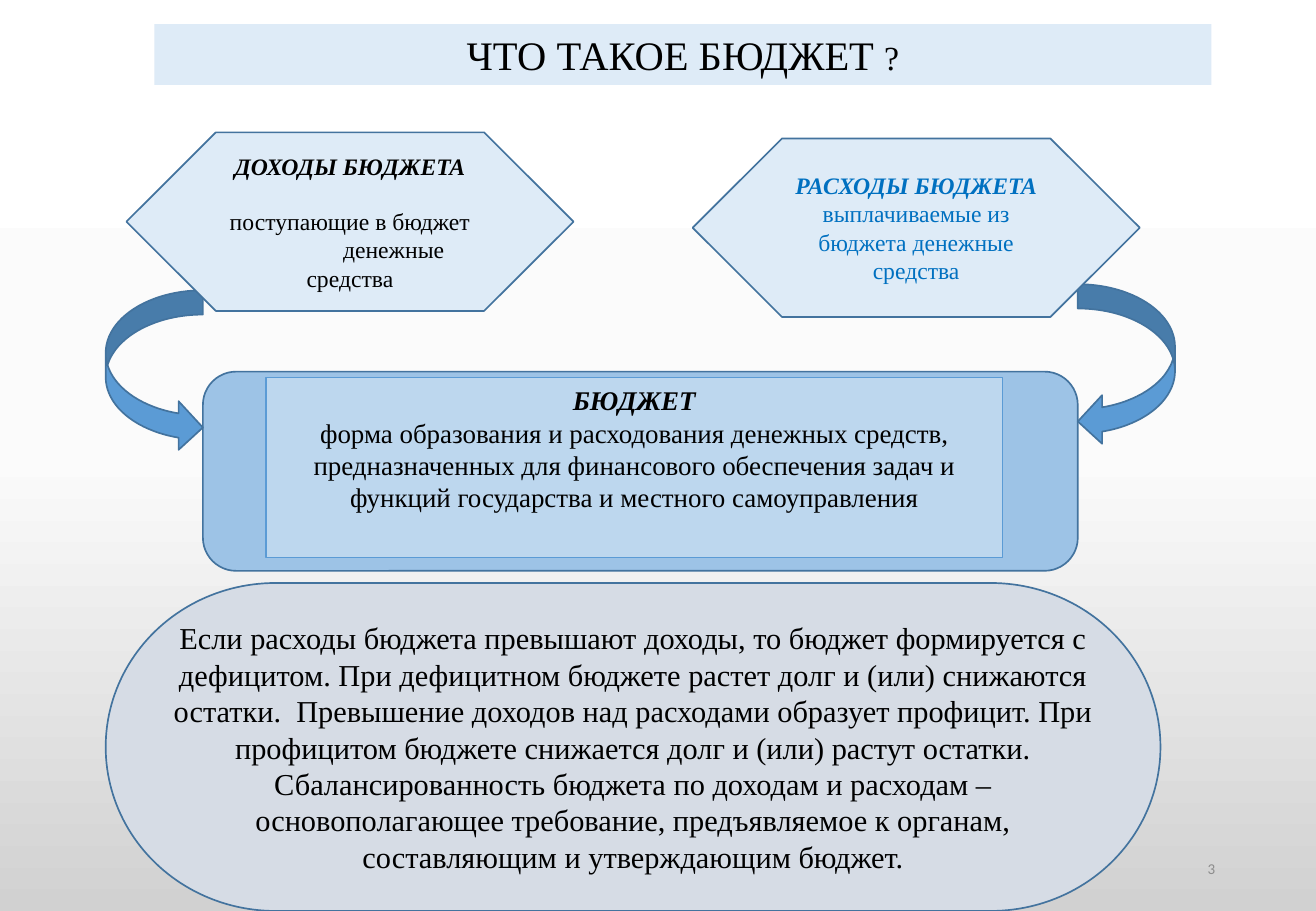
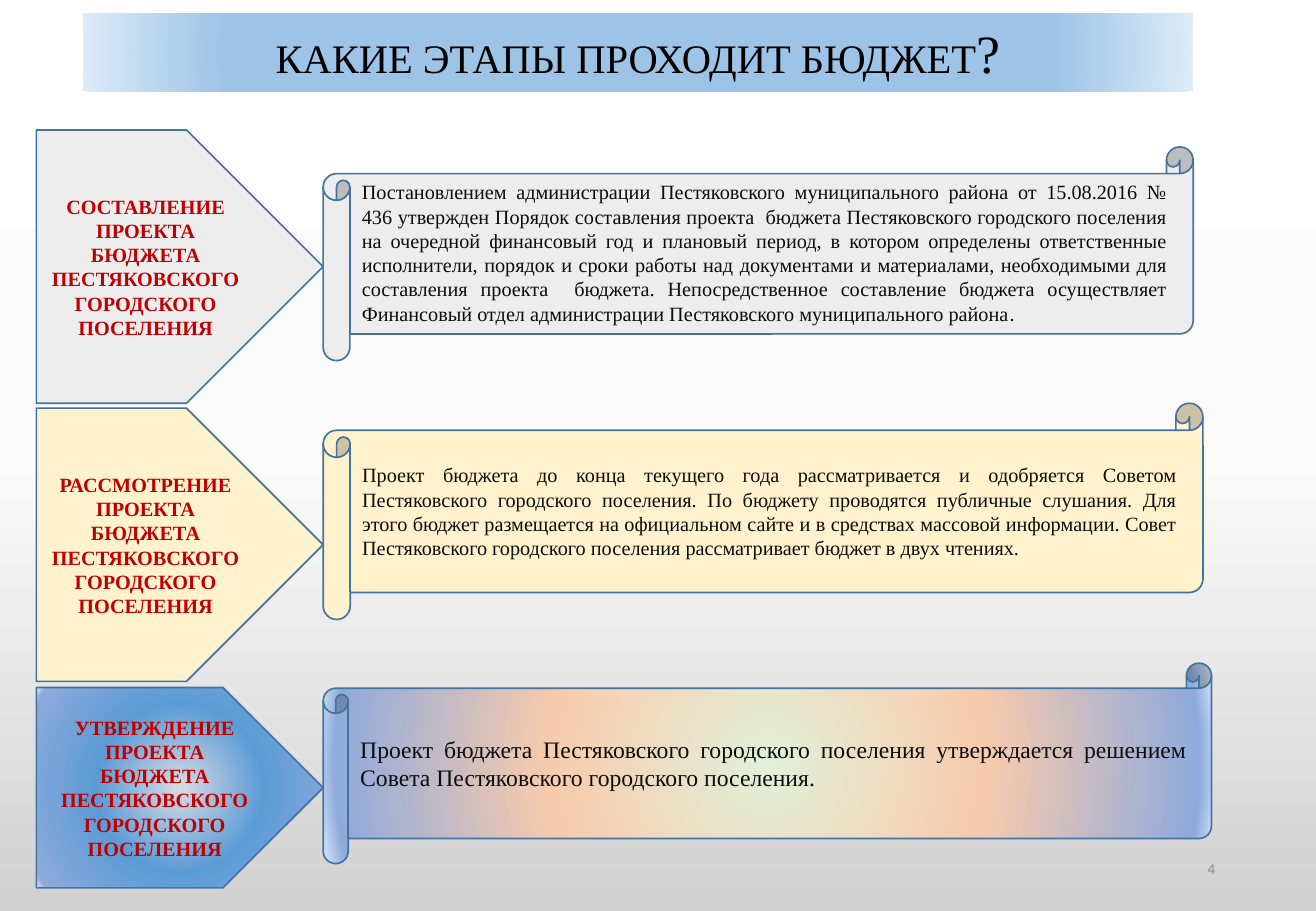
from lxml import etree
from pptx import Presentation
from pptx import util as u
from pptx.dml.color import RGBColor
from pptx.enum import shapes, text
from pptx.oxml import ns

PX = 9144  # EMU in one px, 100 px to the inch
WIDTH, HEIGHT = 1083, 750

BLACK = RGBColor(0x00, 0x00, 0x00)
INK = RGBColor(0x0D, 0x0D, 0x0D)
GREY = RGBColor(0x8C, 0x8C, 0x8C)
RED = RGBColor(0xC0, 0x00, 0x00)
BRIGHT_BLUE = RGBColor(0x00, 0x70, 0xC0)
OUTLINE = RGBColor(0x43, 0x73, 0x9E)
BLUE = RGBColor(0x5B, 0x9B, 0xD5)
SKY = RGBColor(0x9D, 0xC3, 0xE6)
LIGHT_SKY = RGBColor(0xBD, 0xD7, 0xEE)
PALE_BLUE = RGBColor(0xDE, 0xEB, 0xF7)
EDGE_BLUE = RGBColor(0xDC, 0xEB, 0xF8)
PERIWINKLE = RGBColor(0x8F, 0xAA, 0xDC)
SLATE = RGBColor(0xD6, 0xDC, 0xE5)
SILVER = RGBColor(0xED, 0xED, 0xED)
CREAM = RGBColor(0xFF, 0xF2, 0xCC)
MINT = RGBColor(0xE2, 0xF0, 0xD9)
PEACH = RGBColor(0xF8, 0xCB, 0xAD)

# Gradients as (position in percent, colour) stops
PAGE = [(0, RGBColor(0xFF, 0xFF, 0xFF)), (50, RGBColor(0xFB, 0xFB, 0xFB)),
        (100, RGBColor(0xD1, 0xD1, 0xD1))]
TITLE_GLOW = [(74, SKY), (100, EDGE_BLUE)]
BLUE_GLOW = [(0, SLATE), (48, BLUE), (95, PERIWINKLE), (100, EDGE_BLUE)]
PEACH_GLOW = [(0, MINT), (48, PEACH), (95, PERIWINKLE), (100, EDGE_BLUE)]

CENTER, RIGHT = text.PP_ALIGN.CENTER, text.PP_ALIGN.RIGHT
JUSTIFY = text.PP_ALIGN.JUSTIFY
TOP, MIDDLE = text.MSO_ANCHOR.TOP, text.MSO_ANCHOR.MIDDLE
KIND = shapes.MSO_SHAPE


def add_run(p, words, size=12, color=BLACK, bold=False, italic=False,
            font="Times New Roman"):
    r = p.add_run()
    r.text = words
    r.font.name, r.font.size = font, u.Pt(size)
    r.font.bold, r.font.italic = bold, italic
    r.font.color.rgb = color


def set_gradient(fill, parent, stops, angle=None):
    """Fill with a linear gradient, or from the centre outwards if no angle."""
    fill.solid()
    solid = parent.find(ns.qn("a:solidFill"))
    grad = etree.Element(ns.qn("a:gradFill"), rotWithShape="1")
    stop_list = etree.SubElement(grad, ns.qn("a:gsLst"))
    for position, color in stops:
        stop = etree.SubElement(stop_list, ns.qn("a:gs"), pos=str(position * 1000))
        etree.SubElement(stop, ns.qn("a:srgbClr"), val=str(color))
    if angle is None:
        centre = etree.SubElement(grad, ns.qn("a:path"), path="circle")
        etree.SubElement(centre, ns.qn("a:fillToRect"),
                         dict.fromkeys("ltrb", "50000"))
    else:
        etree.SubElement(grad, ns.qn("a:lin"), ang=str(angle * 60000), scaled="0")
    parent.replace(solid, grad)


class Deck:
    def __init__(self):
        self.prs = Presentation()
        self.prs.slide_width, self.prs.slide_height = WIDTH * PX, HEIGHT * PX
        self.s = None

    def slide(self, number):
        self.s = self.prs.slides.add_slide(self.prs.slide_layouts[6])
        fill = self.s.background.fill
        fill.solid()
        bg = next(self.s.element.iter(ns.qn("p:bgPr")))
        set_gradient(fill, bg, PAGE, angle=90)
        box = self.s.shapes.add_textbox(*(n * PX for n in (766, 695, 244, 40)))
        self.put_text(box, [[(str(number), {})]], align=RIGHT,
                      size=8.9, color=GREY, font="Calibri")

    def shape(self, kind, at, fill, line=OUTLINE, weight=1):
        sp = self.s.shapes.add_shape(kind, *(n * PX for n in at))
        sp.shadow.inherit = False
        if isinstance(fill, list):
            set_gradient(sp.fill, sp.element.spPr, fill)
        else:
            sp.fill.solid()
            sp.fill.fore_color.rgb = fill
        if line is None:
            sp.line.fill.background()
        else:
            sp.line.color.rgb, sp.line.width = line, u.Pt(weight)
        return sp

    def put_text(self, sp, paragraphs, align=CENTER, anchor=MIDDLE, **style):
        """Each paragraph is a list of (words, changes to the style)."""
        tf = sp.text_frame
        tf.word_wrap, tf.vertical_anchor = True, anchor
        for i, runs in enumerate(paragraphs):
            p = tf.add_paragraph() if i else tf.paragraphs[0]
            p.alignment = align
            for words, changes in runs:
                add_run(p, words, **{**style, **changes})
        return tf

    def title(self, at, fill, words, mark_size):
        sp = self.shape(KIND.RECTANGLE, at, fill, line=None)
        self.put_text(sp, [[(words, {}), ("?", {"size": mark_size})]],
                      anchor=TOP, size=24)


def budget_slide(deck):
    deck.slide(3)
    deck.title((127, 20, 870, 50), PALE_BLUE, "ЧТО ТАКОЕ БЮДЖЕТ ", 20)
    heading = {"bold": True, "italic": True}

    # Definition of the budget
    deck.shape(KIND.ROUNDED_RECTANGLE, (167, 306, 720, 164), SKY)
    sp = deck.shape(KIND.RECTANGLE, (219, 311, 606, 148), LIGHT_SKY, BLUE, 0.75)
    deck.put_text(sp, [
        [("БЮДЖЕТ", heading)],
        [("форма образования и расходования денежных средств, предназначенных "
          "для финансового обеспечения задач и функций государства и местного "
          "самоуправления", {})]], anchor=TOP, size=16)

    # Arrows from income and expenses to the budget
    deck.shape(KIND.CURVED_RIGHT_ARROW, (87, 239, 80, 133), BLUE)
    deck.shape(KIND.CURVED_LEFT_ARROW, (887, 234, 80, 133), BLUE)

    # Expenses and income
    sp = deck.shape(KIND.FLOWCHART_PREPARATION, (570, 114, 368, 147), PALE_BLUE)
    deck.put_text(sp, [[("РАСХОДЫ БЮДЖЕТА ", heading),
                        ("выплачиваемые из бюджета денежные средства", {})]],
                  size=14, color=BRIGHT_BLUE)
    sp = deck.shape(KIND.FLOWCHART_PREPARATION, (104, 109, 368, 147), PALE_BLUE)
    tf = deck.put_text(sp, [[("ДОХОДЫ БЮДЖЕТА", heading)],
                            [("поступающие в бюджет", {})],
                            [("денежные", {})],
                            [("средства", {})]], size=14)
    tf.paragraphs[0].space_after = u.Pt(16)
    tf.paragraphs[2]._p.get_or_add_pPr().set("marL", str(72 * PX))

    # Deficit and surplus
    sp = deck.shape(KIND.FLOWCHART_TERMINATOR, (87, 480, 868, 270), SLATE)
    deck.put_text(sp, [[(
        "Если расходы бюджета превышают доходы, то бюджет формируется с "
        "дефицитом. При дефицитном бюджете растет долг и (или) снижаются "
        "остатки.  Превышение доходов над расходами образует профицит. При "
        "профицитом бюджете снижается долг и (или) растут остатки. "
        "Сбалансированность бюджета по доходам и расходам – основополагающее "
        "требование, предъявляемое к органам, составляющим и утверждающим "
        "бюджет.", {})]], size=18)


def stages_slide(deck):
    deck.slide(4)
    deck.title((68, 11, 914, 64), TITLE_GLOW, "КАКИЕ ЭТАПЫ ПРОХОДИТ БЮДЖЕТ", 32)

    # Stage: name, arrow (top, height, fill), scroll (top, width, height, fill),
    # scroll text, size and anchor
    stages = [
        ("СОСТАВЛЕНИЕ", (107, 225, SILVER), (121, 716, 176, SILVER),
         [("Постановлением администрации Пестяковского муниципального района от "
           "15.08.2016 № 436 утвержден Порядок составления проекта  бюджета "
           "Пестяковского городского поселения на очередной финансовый год и "
           "плановый период, в котором определены ответственные исполнители, "
           "порядок и сроки работы над документами и материалами, необходимыми "
           "для составления проекта  бюджета. Непосредственное составление "
           "бюджета осуществляет Финансовый отдел администрации Пестяковского "
           "муниципального района", {}), (".", {"font": "Calibri"})], 12, TOP),
        ("РАССМОТРЕНИЕ", (336, 225, CREAM), (332, 724, 178, CREAM),
         [("Проект бюджета до конца текущего года рассматривается и одобряется "
           "Советом Пестяковского городского поселения. По бюджету проводятся "
           "публичные слушания. Для этого бюджет размещается на официальном "
           "сайте и в средствах массовой информации. Совет Пестяковского "
           "городского поселения рассматривает бюджет в двух чтениях.", {})],
         12, MIDDLE),
        ("УТВЕРЖДЕНИЕ", (566, 165, BLUE_GLOW), (546, 731, 165, PEACH_GLOW),
         [("Проект бюджета Пестяковского городского поселения утверждается "
           "решением Совета Пестяковского городского поселения.", {})],
         14, MIDDLE),
    ]
    left, arrow_width = 30, 236
    for name, arrow, scroll, runs, size, anchor in stages:
        top, height, fill = arrow
        sp = deck.shape(KIND.PENTAGON, (left, top, arrow_width, height), fill)
        deck.put_text(sp, [[(f"{name} ПРОЕКТА БЮДЖЕТА", {})],
                           [("ПЕСТЯКОВСКОГО ГОРОДСКОГО ПОСЕЛЕНИЯ", {})]],
                      size=12, color=RED, bold=True)
        top, width, height, fill = scroll
        sp = deck.shape(KIND.HORIZONTAL_SCROLL,
                        (left + arrow_width, top, width, height), fill)
        deck.put_text(sp, [runs], align=JUSTIFY, anchor=anchor, size=size,
                      color=INK)


def main():
    deck = Deck()
    budget_slide(deck)
    stages_slide(deck)
    deck.prs.save("out.pptx")


if __name__ == "__main__":
    main()
